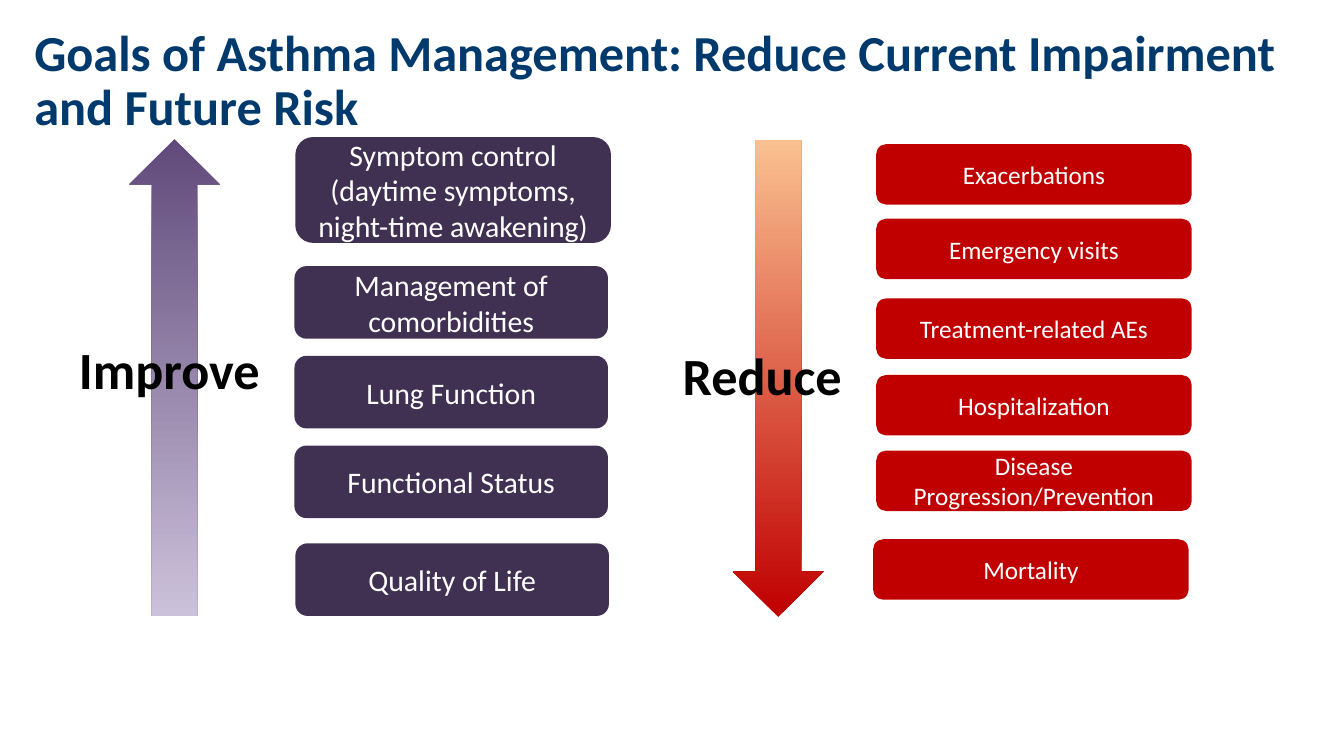
from pptx import Presentation
from pptx.dml.color import RGBColor
from pptx.enum.shapes import MSO_SHAPE
from pptx.enum.text import MSO_ANCHOR, PP_ALIGN
from pptx.util import Inches, Pt

NAVY = RGBColor(0x00, 0x39, 0x6C)
BLACK = RGBColor(0x00, 0x00, 0x00)
WHITE = RGBColor(0xFF, 0xFF, 0xFF)
PURPLE = RGBColor(0x40, 0x31, 0x52)
VIOLET = RGBColor(0x60, 0x4A, 0x7B)
LILAC = RGBColor(0xCC, 0xC1, 0xDA)
RED = RGBColor(0xC0, 0x00, 0x00)
PEACH = RGBColor(0xFA, 0xC0, 0x90)


def write(sp, text, size, color, bold=False, align=PP_ALIGN.CENTER,
          anchor=MSO_ANCHOR.MIDDLE, spacing=None):
    tf = sp.text_frame
    tf.word_wrap = True
    tf.vertical_anchor = anchor
    tf.text = text
    for p in tf.paragraphs:
        p.alignment = align
        p.line_spacing = spacing
        for r in p.runs:
            r.font.name = "Calibri"
            r.font.size = Pt(size)
            r.font.bold = bold
            r.font.color.rgb = color


prs = Presentation()
prs.slide_width = Inches(13.33)
prs.slide_height = Inches(7.5)
s = prs.slides.add_slide(prs.slide_layouts[5])

title = s.shapes.title
title.left, title.top = Inches(0.24), Inches(0.19)
title.width, title.height = Inches(12.86), Inches(1.25)
write(title, "Goals of Asthma Management: Reduce Current Impairment and Future Risk",
      36, NAVY, bold=True, align=PP_ALIGN.LEFT, spacing=0.9)

arrows = [
    ("Improve", 1.28, 1.38, 180, (VIOLET, LILAC), 0.47, 3.3, 2.42),
    ("Reduce", 7.27, 1.39, 0, (RED, PEACH), 6.45, 3.36, 2.22),
]
for label, x, y, rotation, colors, label_x, label_y, label_w in arrows:
    group = s.shapes.add_group_shape()
    sp = group.shapes.add_shape(MSO_SHAPE.DOWN_ARROW, Inches(x), Inches(y),
                                Inches(0.9), Inches(4.73))
    sp.rotation = rotation
    sp.shadow.inherit = False
    sp.line.fill.background()
    sp.fill.gradient()
    sp.fill.gradient_angle = 90
    for stop, color, position in zip(sp.fill.gradient_stops, colors, (0, 1)):
        stop.color.rgb = color
        stop.position = position
    tb = group.shapes.add_textbox(Inches(label_x), Inches(label_y),
                                  Inches(label_w), Inches(0.73))
    write(tb, label, 37.3, BLACK, bold=True, anchor=MSO_ANCHOR.TOP)

improve_goals = [
    ("Symptom control (daytime symptoms,\nnight-time awakening)", 2.93, 1.36, 3.13, 1.05),
    ("Management of comorbidities", 2.92, 2.64, 3.11, 0.72),
    ("Lung Function", 2.92, 3.53, 3.11, 0.72),
    ("Functional Status", 2.92, 4.42, 3.11, 0.72),
    ("Quality of Life", 2.93, 5.39, 3.11, 0.72),
]
reduce_goals = [
    ("Exacerbations", 8.69, 1.43, 3.13, 0.6),
    ("Emergency visits", 8.69, 2.17, 3.13, 0.6),
    ("Treatment-related AEs", 8.69, 2.96, 3.13, 0.6),
    ("Hospitalization", 8.69, 3.72, 3.13, 0.6),
    ("Disease Progression/Prevention", 8.69, 4.47, 3.13, 0.6),
    ("Mortality", 8.66, 5.35, 3.13, 0.6),
]
for goals, fill, size in ((improve_goals, PURPLE, 21.3), (reduce_goals, RED, 18)):
    group = s.shapes.add_group_shape()
    for text, x, y, w, h in goals:
        sp = group.shapes.add_shape(MSO_SHAPE.ROUNDED_RECTANGLE, Inches(x), Inches(y),
                                    Inches(w), Inches(h))
        sp.shadow.inherit = False
        sp.fill.solid()
        sp.fill.fore_color.rgb = fill
        sp.line.fill.background()
        write(sp, text, size, WHITE)

prs.save("out.pptx")
